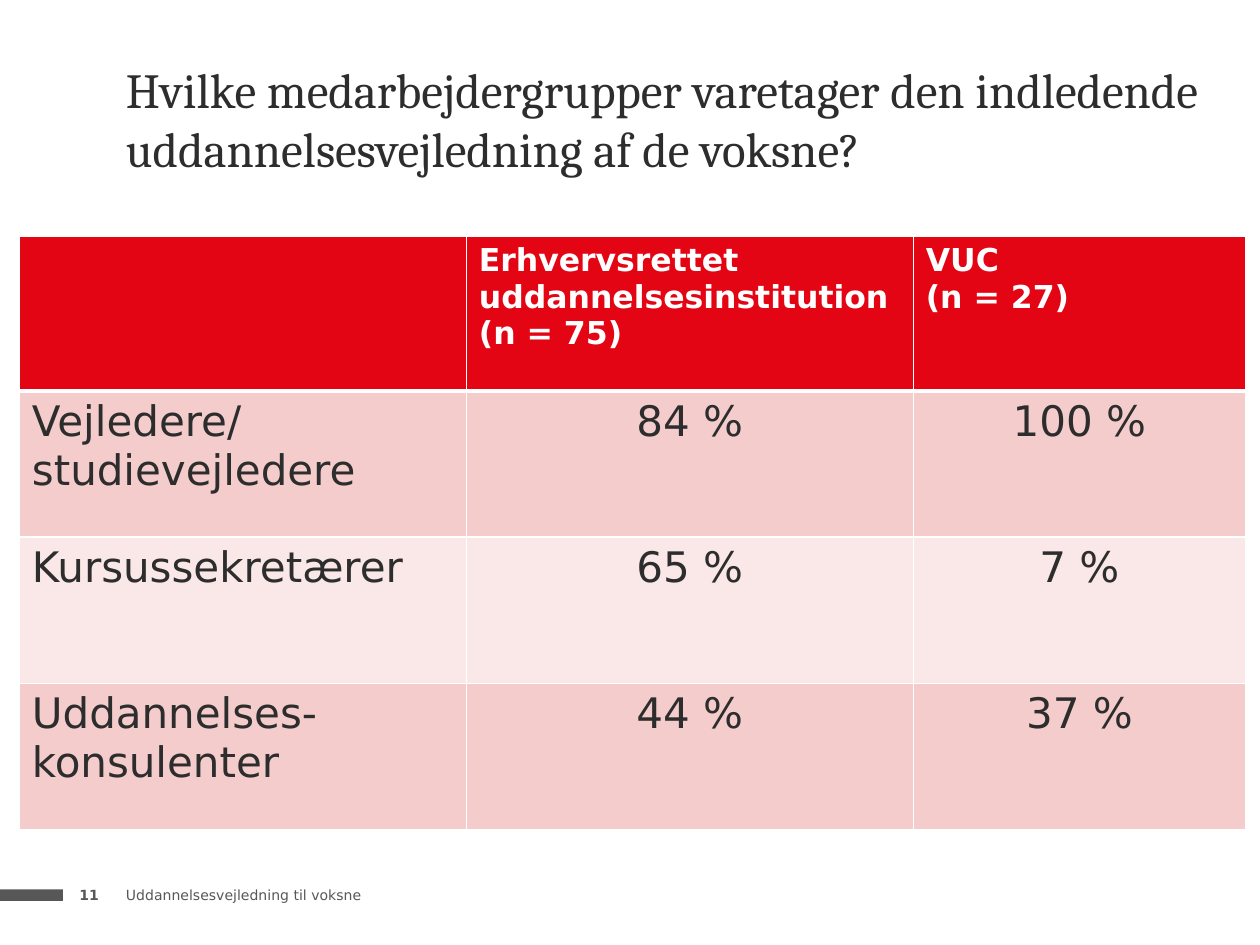
import pptx
import pptx.dml.color
import pptx.enum.shapes
import pptx.enum.text
import pptx.oxml
import pptx.oxml.ns
import pptx.util
from pptx.util import Cm

RGBColor = pptx.dml.color.RGBColor
Align = pptx.enum.text.PP_ALIGN
Anchor = pptx.enum.text.MSO_ANCHOR

WHITE = RGBColor(0xFF, 0xFF, 0xFF)
GREY = RGBColor(0x57, 0x57, 0x57)
DARK = RGBColor(0x2D, 0x2D, 0x2D)
RED = RGBColor(0xE4, 0x05, 0x14)
ROSE = RGBColor(0xF5, 0xCC, 0xCC)
PALE_ROSE = RGBColor(0xFA, 0xE7, 0xE7)

HEADING_FONT = "Cambria"
BODY_FONT = "DejaVu Sans"

HEADER = ["", "Erhvervsrettet uddannelsesinstitution\n(n = 75)", "VUC\n(n = 27)"]
ROWS = [
    ["Vejledere/\nstudievejledere", "84 %", "100 %"],
    ["Kursussekretærer", "65 %", "7 %"],
    ["Uddannelses-konsulenter", "44 %", "37 %"],
]
COLUMN_WIDTHS = [Cm(9.01), Cm(9.01), Cm(6.7)]
ROW_HEIGHTS = [Cm(3.12)] + [Cm(2.95)] * len(ROWS)


class SlideBuilder:
    def __init__(self, slide):
        self.slide = slide

    def style(self, text_frame, font_name, size, color, bold=False, align=Align.LEFT):
        for paragraph in text_frame.paragraphs:
            paragraph.alignment = align
            font = paragraph.font
            font.name, font.size, font.bold = font_name, pptx.util.Pt(size), bold
            font.color.rgb = color

    def bar(self, left, top, width, height, color):
        shape = self.slide.shapes.add_shape(
            pptx.enum.shapes.MSO_SHAPE.RECTANGLE, left, top, width, height)
        shape.shadow.inherit = False
        shape.fill.solid()
        shape.fill.fore_color.rgb = color
        shape.line.fill.background()

    def text(self, left, top, width, height, text, font_name, size, color,
             bold=False, anchor=Anchor.MIDDLE, wrap=False):
        text_frame = self.slide.shapes.add_textbox(left, top, width, height).text_frame
        text_frame.margin_left = text_frame.margin_right = 0
        text_frame.margin_top = text_frame.margin_bottom = 0
        text_frame.word_wrap = wrap
        text_frame.vertical_anchor = anchor
        text_frame.text = text
        self.style(text_frame, font_name, size, color, bold)

    def borders(self, cell, top_width, bottom_width):
        """Draw white cell borders; the side borders are 1 point wide."""
        properties = cell._tc.get_or_add_tcPr()
        widths = {"L": 1, "R": 1, "T": top_width, "B": bottom_width}
        for side, width in widths.items():
            properties.append(pptx.oxml.parse_xml(
                f'<a:ln{side} {pptx.oxml.ns.nsdecls("a")} w="{pptx.util.Pt(width)}">'
                f'<a:solidFill><a:srgbClr val="{WHITE}"/></a:solidFill></a:ln{side}>'))

    def table(self, left, top, header, rows, column_widths, row_heights):
        table = self.slide.shapes.add_table(
            len(row_heights), len(column_widths), left, top,
            sum(column_widths), sum(row_heights)).table
        for column, width in zip(table.columns, column_widths):
            column.width = width
        for row, height in zip(table.rows, row_heights):
            row.height = height
        for row_index, texts in enumerate([header] + rows):
            is_header = row_index == 0
            fill = RED if is_header else ROSE if row_index % 2 else PALE_ROSE
            for column_index, text in enumerate(texts):
                cell = table.cell(row_index, column_index)
                cell.text = text
                self.borders(cell, 3 if row_index == 1 else 1, 3 if is_header else 1)
                cell.fill.solid()
                cell.fill.fore_color.rgb = fill
                if is_header:
                    self.style(cell.text_frame, BODY_FONT, 18, WHITE, bold=True)
                else:
                    align = Align.CENTER if column_index else Align.LEFT
                    self.style(cell.text_frame, BODY_FONT, 24, DARK, align=align)


def main():
    presentation = pptx.Presentation()
    presentation.slide_width, presentation.slide_height = Cm(25.4), Cm(19.05)
    builder = SlideBuilder(presentation.slides.add_slide(presentation.slide_layouts[6]))

    builder.bar(Cm(0), Cm(17.93), Cm(1.27), Cm(0.23), GREY)
    builder.text(Cm(2.54), Cm(17.83), Cm(15), Cm(0.41),
                 "Uddannelsesvejledning til voksne", BODY_FONT, 8, GREY)
    builder.text(Cm(1.6), Cm(17.83), Cm(0.94), Cm(0.41), "11", BODY_FONT, 8, GREY, bold=True)
    builder.text(Cm(2.54), Cm(1.07), Cm(22.22), Cm(2.51),
                 "Hvilke medarbejdergrupper varetager den indledende "
                 "uddannelsesvejledning af de voksne?",
                 HEADING_FONT, 28, DARK, anchor=Anchor.BOTTOM, wrap=True)
    builder.table(Cm(0.39), Cm(4.76), HEADER, ROWS, COLUMN_WIDTHS, ROW_HEIGHTS)

    presentation.save("out.pptx")


if __name__ == "__main__":
    main()
